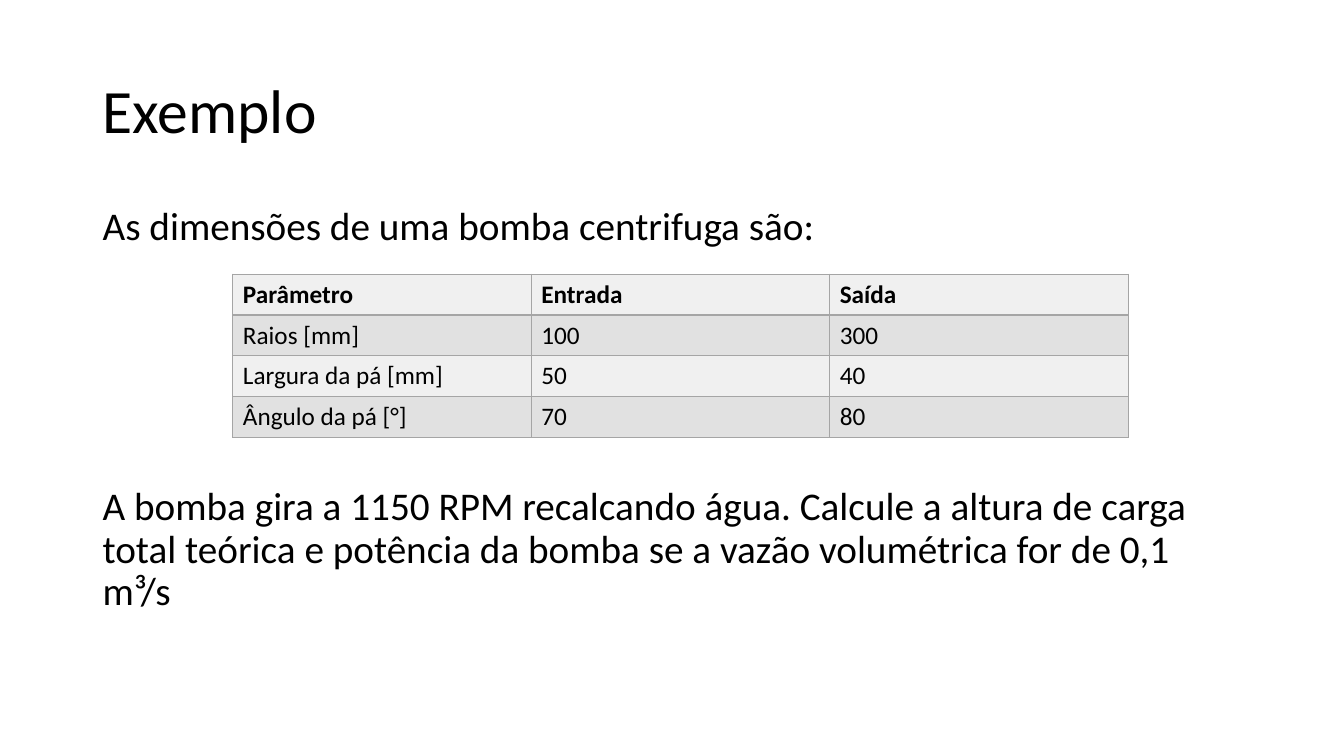
from lxml.etree import SubElement as Sub
from pptx import Presentation
from pptx.dml.color import RGBColor
from pptx.enum.text import MSO_ANCHOR as Anchor
from pptx.oxml.ns import qn
from pptx.util import Inches, Pt

WIDE, HIGH = 13.33, 7.5
LEFT, SPAN = 0.92, 11.5
COL, ROW = 2.96, 0.405
INK, EDGE = "000000", "A5A5A5"
BANDS = ("F0F0F0", "E1E1E1")
PUMP = [
    ("Parâmetro", "Entrada", "Saída"),
    ("Raios [mm]", "100", "300"),
    ("Largura da pá [mm]", "50", "40"),
    ("Ângulo da pá [°]", "70", "80"),
]
TASK = ("A bomba gira a 1150 RPM recalcando água. Calcule a altura de carga "
        "total teórica e potência da bomba se a vazão volumétrica for de 0,1 m³/s")


def tint(code):
    return RGBColor.from_string(code)


def style(para, size, bold=False):
    look = {"name": "Calibri", "size": Pt(size), "bold": bold}
    for key, value in look.items():
        setattr(para.font, key, value)
    para.font.color.rgb = tint(INK)


def add_text(slide, top, height, size, lines, anchor=Anchor.TOP):
    """Add a text box; lines holds pairs of text and space before in points."""
    box = slide.shapes.add_textbox(*map(Inches, (LEFT, top, SPAN, height)))
    frame = box.text_frame
    frame.word_wrap = True
    frame.vertical_anchor = anchor
    for i, (text, gap) in enumerate(lines):
        para = frame.add_paragraph() if i else frame.paragraphs[0]
        para.text = text
        para.line_spacing = 0.9
        para.space_before = Pt(gap)
        style(para, size)


def add_edges(cell):
    props = cell._tc.get_or_add_tcPr()
    for side in ("a:lnL", "a:lnR", "a:lnT", "a:lnB"):
        line = Sub(props, qn(side), w=str(Pt(1)))
        fill = Sub(line, qn("a:solidFill"))
        Sub(fill, qn("a:srgbClr"), val=EDGE)


def add_grid(slide, left, top, data):
    rows, cols = len(data), len(data[0])
    area = map(Inches, (left, top, cols * COL, rows * ROW))
    table = slide.shapes.add_table(rows, cols, *area).table
    for r, row in enumerate(data):
        for c, text in enumerate(row):
            cell = table.cell(r, c)
            cell.text = text
            style(cell.text_frame.paragraphs[0], 18, bold=r == 0)
            add_edges(cell)
            cell.fill.solid()
            cell.fill.fore_color.rgb = tint(BANDS[r % 2])


def main():
    deck = Presentation()
    deck.slide_width, deck.slide_height = Inches(WIDE), Inches(HIGH)
    slide = deck.slides.add_slide(deck.slide_layouts[6])
    add_text(slide, 0.4, 1.45, 44, [("Exemplo", 0)], Anchor.MIDDLE)
    # The wide gap before the task leaves room for the table.
    add_text(slide, 2, 4.76, 28,
             [("As dimensões de uma bomba centrifuga são:", 0), (TASK, 170)])
    add_grid(slide, 2.31, 2.72, PUMP)
    deck.save("out.pptx")


if __name__ == "__main__":
    main()
